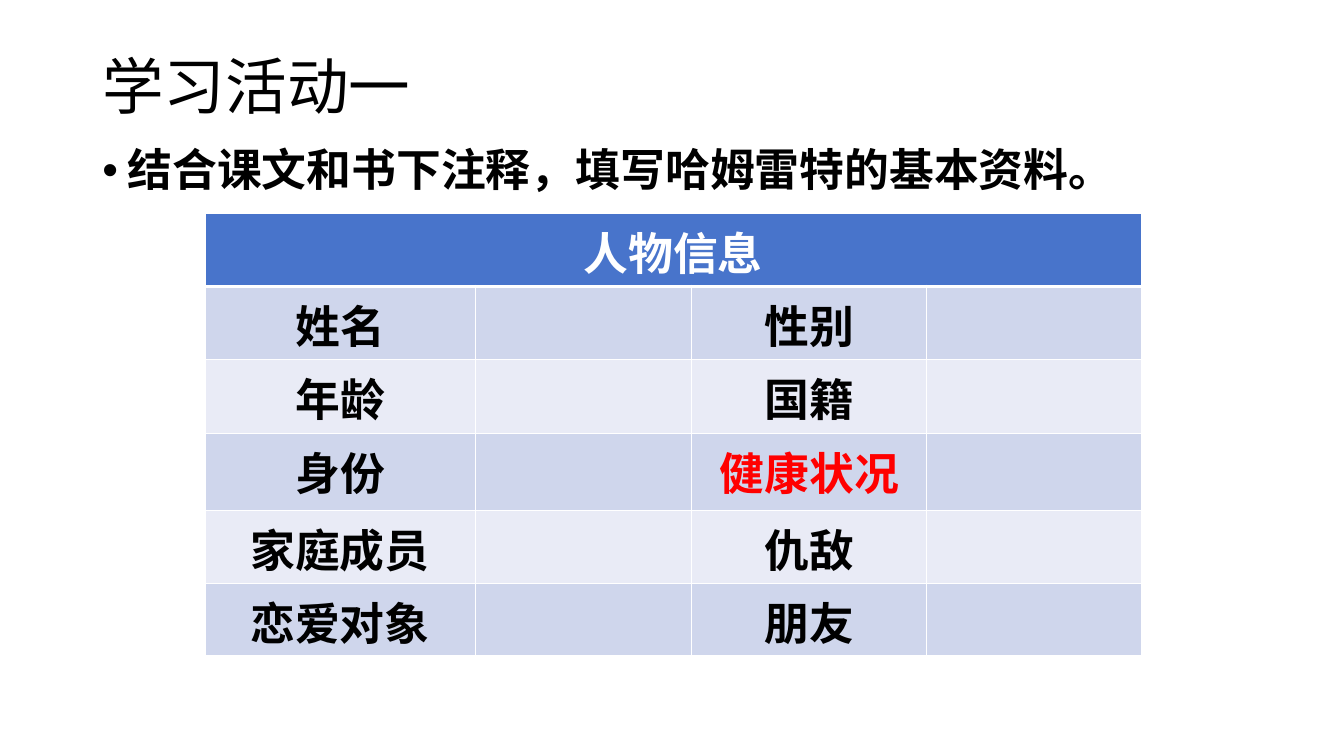
"""Builds the slide with a character information table to fill in."""
from lxml import etree
from pptx import Presentation
from pptx.dml.color import RGBColor
from pptx.enum.text import MSO_ANCHOR, PP_ALIGN
from pptx.oxml.ns import qn
from pptx.util import Pt

CENTER = PP_ALIGN.CENTER
TOP = MSO_ANCHOR.TOP
MIDDLE = MSO_ANCHOR.MIDDLE

COLUMN_WIDTHS = [193, 154.8, 167.8, 153.4]
ROW_HEIGHTS = [52, 52, 53, 55, 52, 52]
FIELDS = [
    ("姓名", "性别"),
    ("年龄", "国籍"),
    ("身份", "健康状况"),
    ("家庭成员", "仇敌"),
    ("恋爱对象", "朋友"),
]


def color(value):
    return RGBColor.from_string(value)


class Page:
    """Holds the style and the current slide."""

    heading_font = "Calibri"
    body_font = "Noto Sans CJK SC"
    black, white, red = "000000", "FFFFFF", "FF0000"
    header_fill = "4874CB"
    band_fills = ["CFD6EC", "E9EBF6"]
    body_size = 32

    def __init__(self, deck):
        self.slide = deck.slides.add_slide(deck.slide_layouts[6])

    def style(self, para, size, font, ink, bold):
        for span in para.runs:
            span.font.size = Pt(size)
            span.font.bold = bold
            span.font.color.rgb = color(ink)
            span.font.name = font
            east_asian = etree.SubElement(span.font._element, qn("a:ea"))
            east_asian.set("typeface", self.body_font)

    def text(self, words, left, top, width, height, size, font, bold=False, anchor=TOP):
        box = self.slide.shapes.add_textbox(Pt(left), Pt(top), Pt(width), Pt(height))
        frame = box.text_frame
        frame.word_wrap = True
        frame.vertical_anchor = anchor
        frame.text = words
        para = frame.paragraphs[0]
        para.line_spacing = 0.9
        self.style(para, size, font, self.black, bold)
        return para

    def title(self, words):
        self.text(words, 66, 12, 828, 104.4, 44, self.heading_font, anchor=MIDDLE)

    def bullet(self, words):
        para = self.text(words, 66, 102.2, 828, 353.5, self.body_size, self.body_font, bold=True)
        properties = para._p.get_or_add_pPr()
        properties.set("marL", str(Pt(18)))
        properties.set("indent", str(-Pt(18)))
        etree.SubElement(properties, qn("a:buFont")).set("typeface", "Arial")
        etree.SubElement(properties, qn("a:buChar")).set("char", "•")

    def borders(self, cell, top, bottom):
        properties = cell._tc.get_or_add_tcPr()
        widths = {"a:lnL": 1, "a:lnR": 1, "a:lnT": top, "a:lnB": bottom}
        for position, (tag, width) in enumerate(widths.items()):
            line = etree.Element(qn(tag), w=str(Pt(width)))
            fill = etree.SubElement(line, qn("a:solidFill"))
            etree.SubElement(fill, qn("a:srgbClr")).set("val", self.white)
            properties.insert(position, line)

    def cell(self, cell, words, fill, ink, top=1, bottom=1):
        cell.fill.solid()
        cell.fill.fore_color.rgb = color(fill)
        self.borders(cell, top, bottom)
        cell.text = words
        para = cell.text_frame.paragraphs[0]
        para.alignment = CENTER
        self.style(para, self.body_size, self.body_font, ink, True)

    def table(self, heading, fields, highlighted, left, top):
        table = self.slide.shapes.add_table(
            len(ROW_HEIGHTS), len(COLUMN_WIDTHS), Pt(left), Pt(top),
            Pt(sum(COLUMN_WIDTHS)), Pt(sum(ROW_HEIGHTS))).table
        for column, width in zip(table.columns, COLUMN_WIDTHS):
            column.width = Pt(width)
        for row, height in zip(table.rows, ROW_HEIGHTS):
            row.height = Pt(height)
        table.cell(0, 0).merge(table.cell(0, len(COLUMN_WIDTHS) - 1))
        for column, cell in enumerate(table.rows[0].cells):
            words = "" if column else heading
            self.cell(cell, words, self.header_fill, self.white, bottom=3)
        for index, (first, second) in enumerate(fields):
            fill = self.band_fills[index % 2]
            edge = 1 if index else 3
            for cell, words in zip(table.rows[index + 1].cells, (first, "", second, "")):
                ink = self.red if words == highlighted else self.black
                self.cell(cell, words, fill, ink, top=edge)


def main():
    deck = Presentation()
    deck.slide_width, deck.slide_height = Pt(960), Pt(540)
    page = Page(deck)
    page.title("学习活动一")
    page.bullet("结合课文和书下注释，填写哈姆雷特的基本资料。")
    page.table("人物信息", FIELDS, "健康状况", 146.4, 152.6)
    deck.save("out.pptx")


if __name__ == "__main__":
    main()
